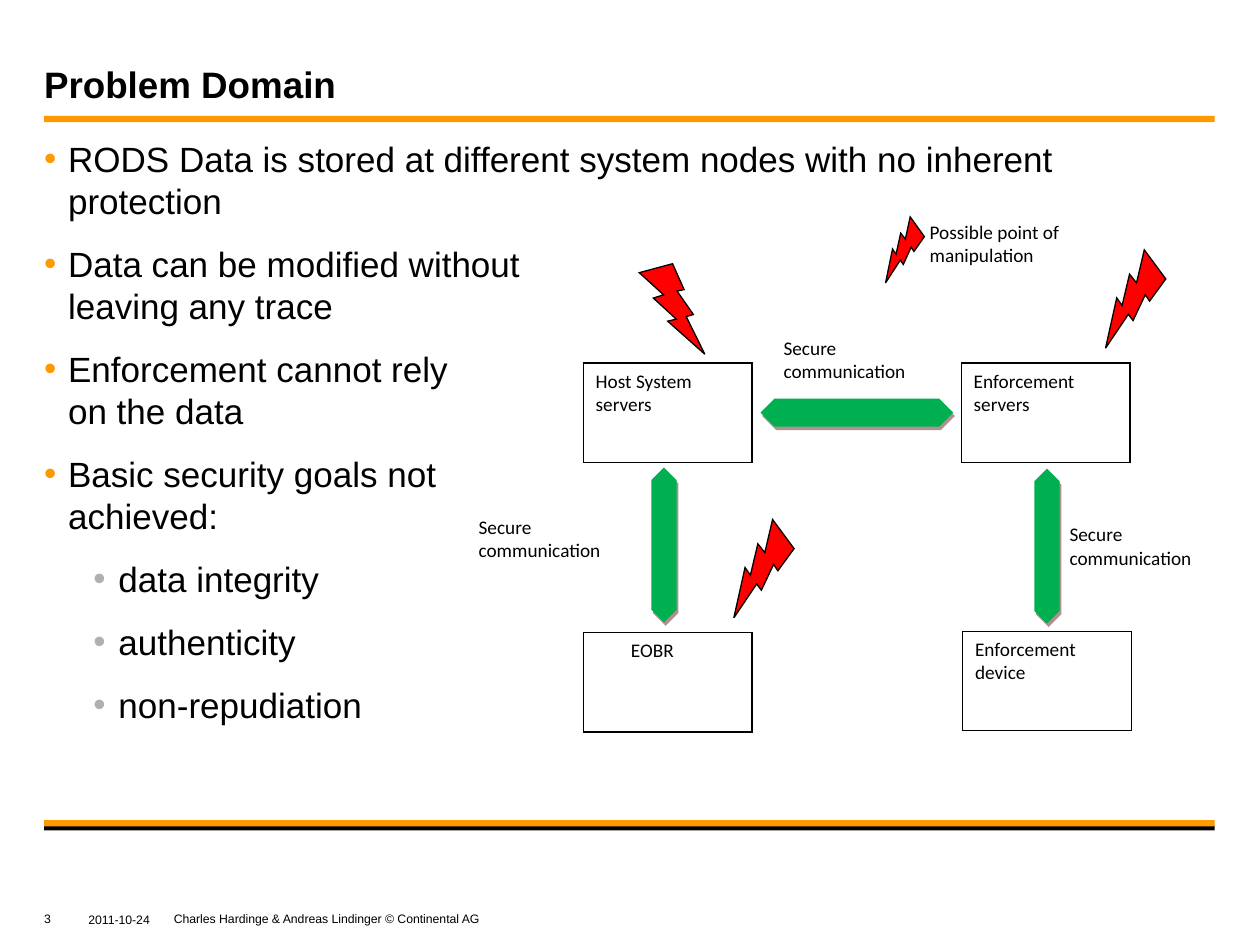
from pptx import Presentation
from pptx import util as u
from pptx.dml.color import RGBColor
from pptx.enum import shapes, text
from pptx.oxml import parse_xml
from pptx.oxml.ns import nsdecls

hue = {"black": "000000", "white": "FFFFFF", "orange": "FF9900",
       "grey": "B0B0B0", "green": "00B050", "red": "FF0000", "shade": "622423"}
kind = shapes.MSO_SHAPE
mid, top = text.MSO_ANCHOR.MIDDLE, text.MSO_ANCHOR.TOP
left, center = text.PP_ALIGN.LEFT, text.PP_ALIGN.CENTER

deck = Presentation()
deck.slide_width, deck.slide_height = u.Inches(10), u.Inches(7.5)
col, row = deck.slide_width / 100, deck.slide_height / 75
slide = deck.slides.add_slide(deck.slide_layouts[5])


def write(frame, lines, size=11, face="Calibri", bold=False, align=left,
          anchor=top, inset=(0.1, 0.05, 0.1, 0.05), after=0, wrap=True,
          dots=None, start=0):
    frame.word_wrap = wrap
    frame.auto_size = text.MSO_AUTO_SIZE.NONE
    frame.vertical_anchor = anchor
    (frame.margin_left, frame.margin_top,
     frame.margin_right, frame.margin_bottom) = map(u.Inches, inset)
    for n, line in enumerate(lines):
        par = frame.paragraphs[0] if n == 0 else frame.add_paragraph()
        par.text = line
        par.alignment = align
        par.space_after = u.Pt(after)
        prop = par._p.get_or_add_pPr()
        if dots:
            level, tint = dots[n]
            par.level = level
            prop.set("marL", str(u.Inches((0.19, 0.59)[level])))
            prop.set("indent", str(-u.Inches((0.19, 0.2)[level])))
            prop.append(parse_xml(f'<a:buClr {nsdecls("a")}><a:srgbClr val="{hue[tint]}"/></a:buClr>'))
            prop.append(parse_xml(f'<a:buFont {nsdecls("a")} typeface="Arial"/>'))
            prop.append(parse_xml(f'<a:buChar {nsdecls("a")} char="•"/>'))
        elif start:
            prop.set("marL", str(u.Inches(start)))
        for run in par.runs:
            run.font.size, run.font.name, run.font.bold = u.Pt(size), face, bold
            run.font.color.rgb = RGBColor.from_string(hue["black"])


def draw(form, x, y, w, h, fill, line=None, width=0.75, turn=0):
    item = slide.shapes.add_shape(form, int(x * col), int(y * row), int(w * col), int(h * row))
    item.shadow.inherit = False
    item.rotation = turn
    item.fill.solid()
    item.fill.fore_color.rgb = RGBColor.from_string(hue[fill])
    if line:
        item.line.color.rgb = RGBColor.from_string(hue[line])
        item.line.width = u.Pt(width)
        item.line._get_or_add_ln().append(parse_xml(f'<a:miter {nsdecls("a")} lim="800000"/>'))
    else:
        item.line.fill.background()
    return item


edge, span = 3.5, 92.9
for y, h, tint in ((65.5, 0.4, "black"), (65.1, 0.5, "orange"), (9.2, 0.5, "orange")):
    draw(kind.RECTANGLE, edge, y, span, h, tint)

title = slide.shapes.title
title.left, title.top = int(edge * col), int(1.3 * row)
title.width, title.height = int(span * col), int(7.1 * row)
write(title.text_frame, ["Problem Domain"], size=21, face="Arial", bold=True,
      anchor=text.MSO_ANCHOR.BOTTOM, inset=(0, 0, 0.1, 0))

goals = ["RODS Data is stored at different system nodes with no inherent protection",
         "Data can be modified without \vleaving any trace",
         "Enforcement cannot rely \von the data",
         "Basic security goals not\vachieved:",
         "data integrity", "authenticity", "non-repudiation"]
body = slide.shapes.add_textbox(int(edge * col), int(10.7 * row), int(span * col), int(53.5 * row))
write(body.text_frame, goals, size=20, face="Arial", after=12, inset=(0, 0.02, 0, 0.02),
      dots=[(0, "orange")] * 4 + [(1, "grey")] * 3)

for x, y, w, words, align in (
        (6.7, 72.2, 5.5, "2011-10-24", center), (edge, 72.1, 2.4, "3", left),
        (13.8, 72.1, 45.7, "Charles Hardinge & Andreas Lindinger © Continental AG", left)):
    foot = slide.shapes.add_textbox(int(x * col), int(y * row), int(w * col), int(1.6 * row))
    write(foot.text_frame, [words], size=7, face="Arial", align=align, anchor=mid,
          inset=(0, 0, 0, 0), wrap=False)

for x, y, w, h, words in (
        (37, 40.4, 14.1, 6.6, "Secure communication"),
        (61.2, 26.2, 14.1, 6.6, "Secure communication"),
        (83.9, 41, 14.1, 6.6, "Secure communication"),
        (72.8, 17, 16.1, 8, "Possible point of manipulation")):
    label = draw(kind.RECTANGLE, x, y, w, h, "white", "white")
    write(label.text_frame, [words], after=10)

for x, y, words, start in (
        (46.3, 28.8, "Host System servers", 0), (76.3, 28.8, "Enforcement servers", 0),
        (46.3, 50.2, "EOBR", 0.28), (76.4, 50.1, "Enforcement device", 0)):
    node = draw(kind.RECTANGLE, x, y, 13.4, 7.9, "white", "black")
    write(node.text_frame, [words], after=10, start=start)

for x, y, w, h, head, turn in (
        (51.9, 37.4, 1.6, 11.7, 1.31, 0), (82.3, 37.5, 1.6, 11.7, 1.31, 0),
        (67.1, 25.4, 1.8, 14.7, 1.83, 90)):
    link = draw(kind.UP_DOWN_ARROW, x, y, w, h, "green", "green", 3, turn)
    link.adjustments[0], link.adjustments[1] = 0.5, head
    link._element.spPr.find("{*}effectLst").append(parse_xml(
        f'<a:outerShdw {nsdecls("a")} dist="{u.Pt(2.2)}" dir="{63 * 60000}" algn="ctr" rotWithShape="0">'
        f'<a:srgbClr val="{hue["shade"]}"><a:alpha val="50000"/></a:srgbClr></a:outerShdw>'))

for x, y, w, h, turn in (
        (50.3, 21, 6.3, 6.6, 10.5), (56.9, 42, 6.8, 6, 75.6),
        (86.4, 20.6, 6.8, 6, 75.6), (69.3, 17.8, 4.6, 3.9, 75.6)):
    draw(kind.LIGHTNING_BOLT, x, y, w, h, "red", "black", turn=turn)

deck.save("out.pptx")
